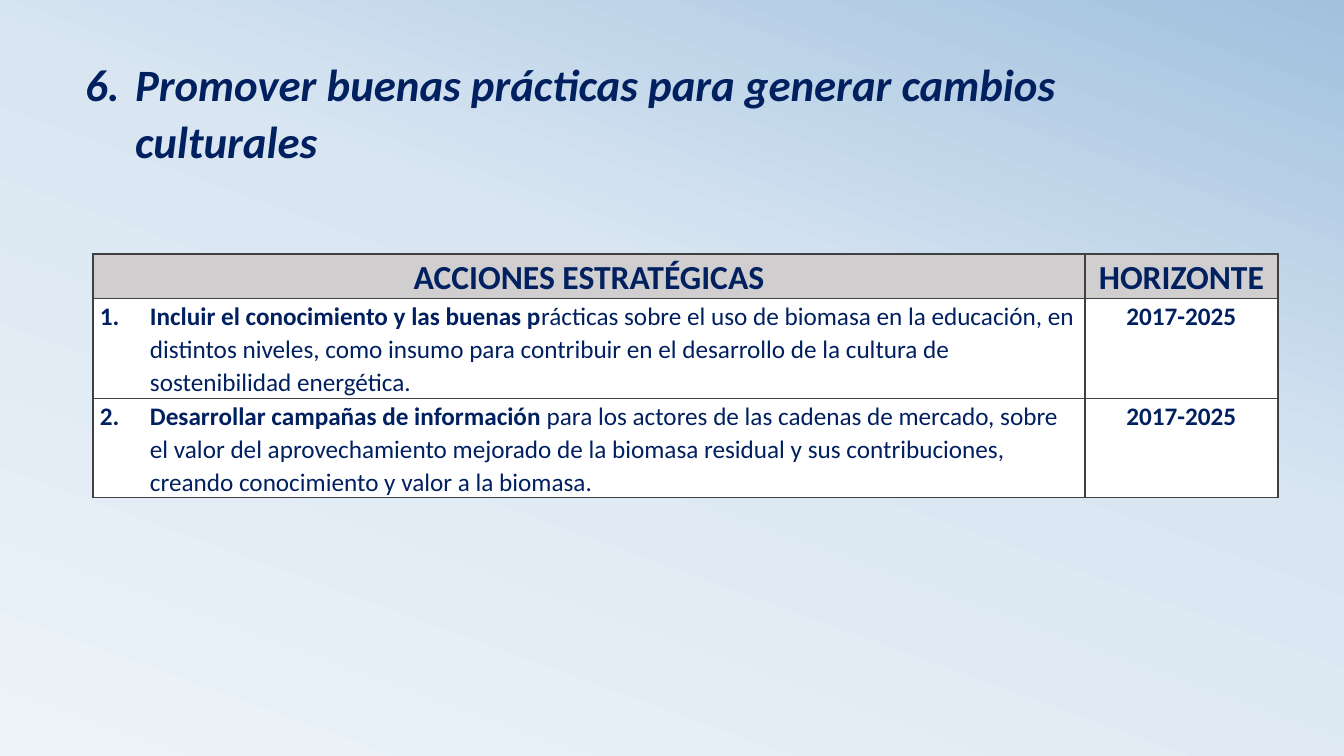
"""Builds the slide on promoting good practices, with its table of strategic actions."""
from copy import deepcopy

from lxml import etree
from pptx import Presentation
from pptx.dml.color import RGBColor
from pptx.enum.text import MSO_ANCHOR, PP_ALIGN
from pptx.oxml.ns import qn
from pptx.util import Pt

PX = 12192000 / 1344
LEFT, CENTER = PP_ALIGN.LEFT, PP_ALIGN.CENTER
NAVY, GREY, WHITE, BORDER = "002060", "D0CECE", "FFFFFF", "404040"


def px(length):
    return round(length * PX)


def write(frame, bold_text, plain_text="", size=18, italic=False, align=LEFT,
          number=None, after=0, insets=(10, 5, 10, 5), anchor=MSO_ANCHOR.TOP):
    frame.word_wrap = True
    frame.vertical_anchor = anchor
    frame.margin_left, frame.margin_top, frame.margin_right, frame.margin_bottom = map(px, insets)
    paragraph = frame.paragraphs[0]
    paragraph.alignment = align
    paragraph.line_spacing = 1.07
    paragraph.space_after = Pt(after)
    if number:
        properties = paragraph._p.get_or_add_pPr()
        properties.set("marL", str(px(50)))
        properties.set("indent", str(px(-50)))
        etree.SubElement(properties, qn("a:buFont"), typeface="+mj-lt")
        etree.SubElement(properties, qn("a:buAutoNum"), type="arabicPeriod", startAt=str(number))
    for text, bold in ((bold_text, True), (plain_text, False)):
        if text:
            run = paragraph.add_run()
            run.text = text
            run.font.name = "Calibri"
            run.font.size = Pt(size)
            run.font.bold = bold
            run.font.italic = italic
            run.font.color.rgb = RGBColor.from_string(NAVY)


deck = Presentation()
deck.slide_width, deck.slide_height = px(1344), px(756)
slide = deck.slides.add_slide(deck.slide_layouts[6])

sky = slide.background.fill
sky.gradient()
sky.gradient_angle = 70
stop_list = slide._element.find(".//" + qn("a:gsLst"))
stop_list.insert(1, deepcopy(stop_list[0]))
for stop, (position, tint) in zip(sky.gradient_stops, ((0, "ECF3F8"), (0.58, "D9E6F2"), (1, "A1C1DE"))):
    stop.position = position
    stop.color.rgb = RGBColor.from_string(tint)

title = slide.shapes.add_textbox(px(75), px(68), px(1184), px(105))
write(title.text_frame, "Promover buenas prácticas para generar cambios culturales",
      size=32, italic=True, number=6, anchor=MSO_ANCHOR.BOTTOM)

actions = [
    ("Incluir el conocimiento y las buenas p",
     "rácticas sobre el uso de biomasa en la educación, en distintos niveles, como insumo "
     "para contribuir en el desarrollo de la cultura de sostenibilidad energética.", "2017-2025"),
    ("Desarrollar campañas de información ",
     "para los actores de las cadenas de mercado, sobre el valor del aprovechamiento mejorado "
     "de la biomasa residual y sus contribuciones, creando conocimiento y valor a la biomasa.",
     "2017-2025"),
]
plan = slide.shapes.add_table(3, 2, px(93), px(254), px(1185), px(243)).table
for column, width in zip(plan.columns, (992, 193)):
    column.width = px(width)
for row, height in zip(plan.rows, (44, 100, 99)):
    row.height = px(height)

for cell in plan.iter_cells():
    cell_properties = cell._tc.get_or_add_tcPr()
    for side in ("a:lnL", "a:lnR", "a:lnT", "a:lnB"):
        edge = etree.SubElement(cell_properties, qn(side), w=str(Pt(1)))
        edge_fill = etree.SubElement(edge, qn("a:solidFill"))
        etree.SubElement(edge_fill, qn("a:srgbClr"), val=BORDER)
    cell.fill.solid()
    cell.fill.fore_color.rgb = RGBColor.from_string(WHITE)

for column, heading in enumerate(("ACCIONES ESTRATÉGICAS", "HORIZONTE")):
    header = plan.cell(0, column)
    header.fill.fore_color.rgb = RGBColor.from_string(GREY)
    write(header.text_frame, heading, size=24, align=CENTER, after=8, insets=(5, 1, 5, 0))

for number, (lead, detail, horizon) in enumerate(actions, start=1):
    write(plan.cell(number, 0).text_frame, lead, detail, number=number, after=8, insets=(7, 1, 7, 0))
    write(plan.cell(number, 1).text_frame, horizon, align=CENTER, after=8, insets=(7, 1, 7, 0))

for cell in plan.iter_cells():
    cell.text_frame.word_wrap = None
    cell.vertical_anchor = MSO_ANCHOR.TOP
    cell.margin_left = cell.margin_right = px(5 if cell is plan.cell(0, 1) else 7)
    cell.margin_top, cell.margin_bottom = px(1), 0

plan.cell(0, 1).margin_left = plan.cell(0, 1).margin_right = px(5)
deck.save("out.pptx")
